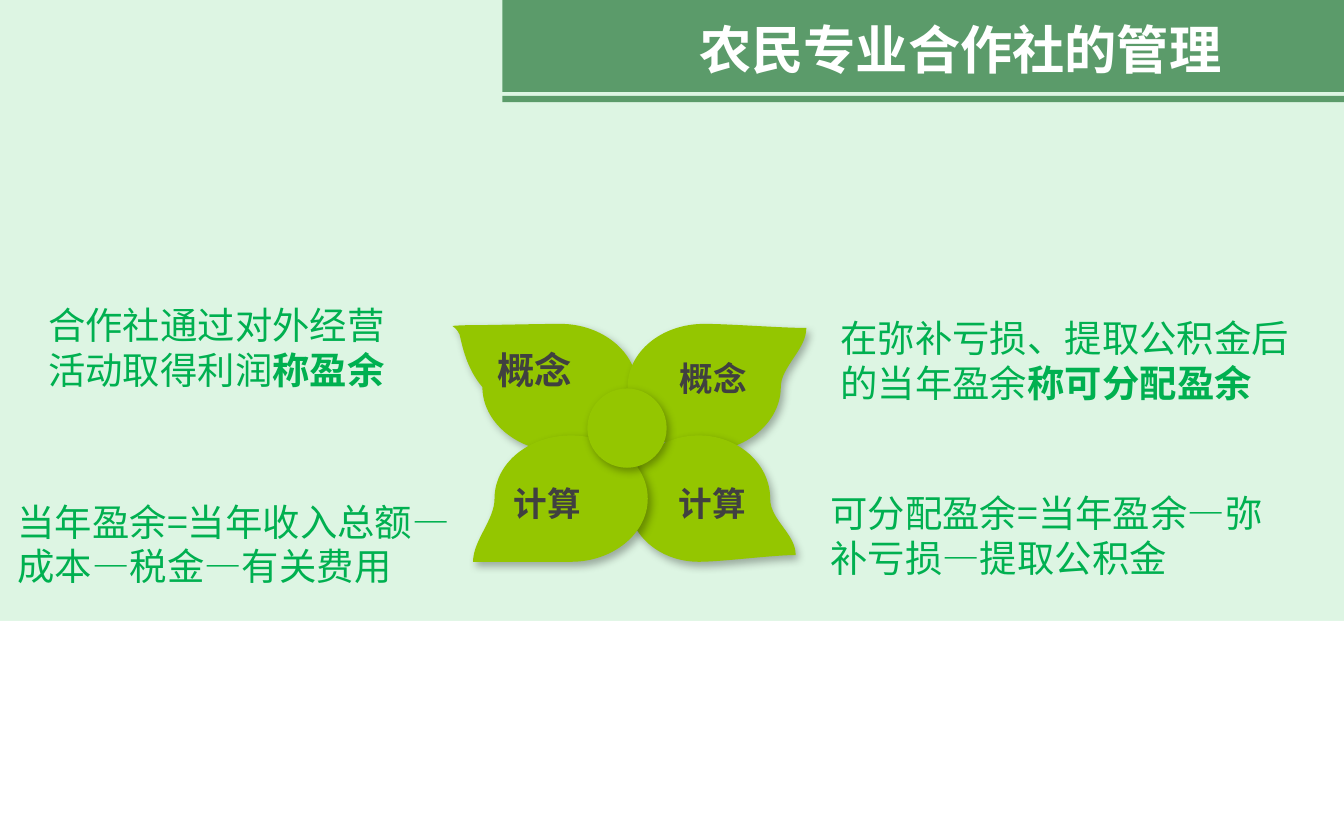
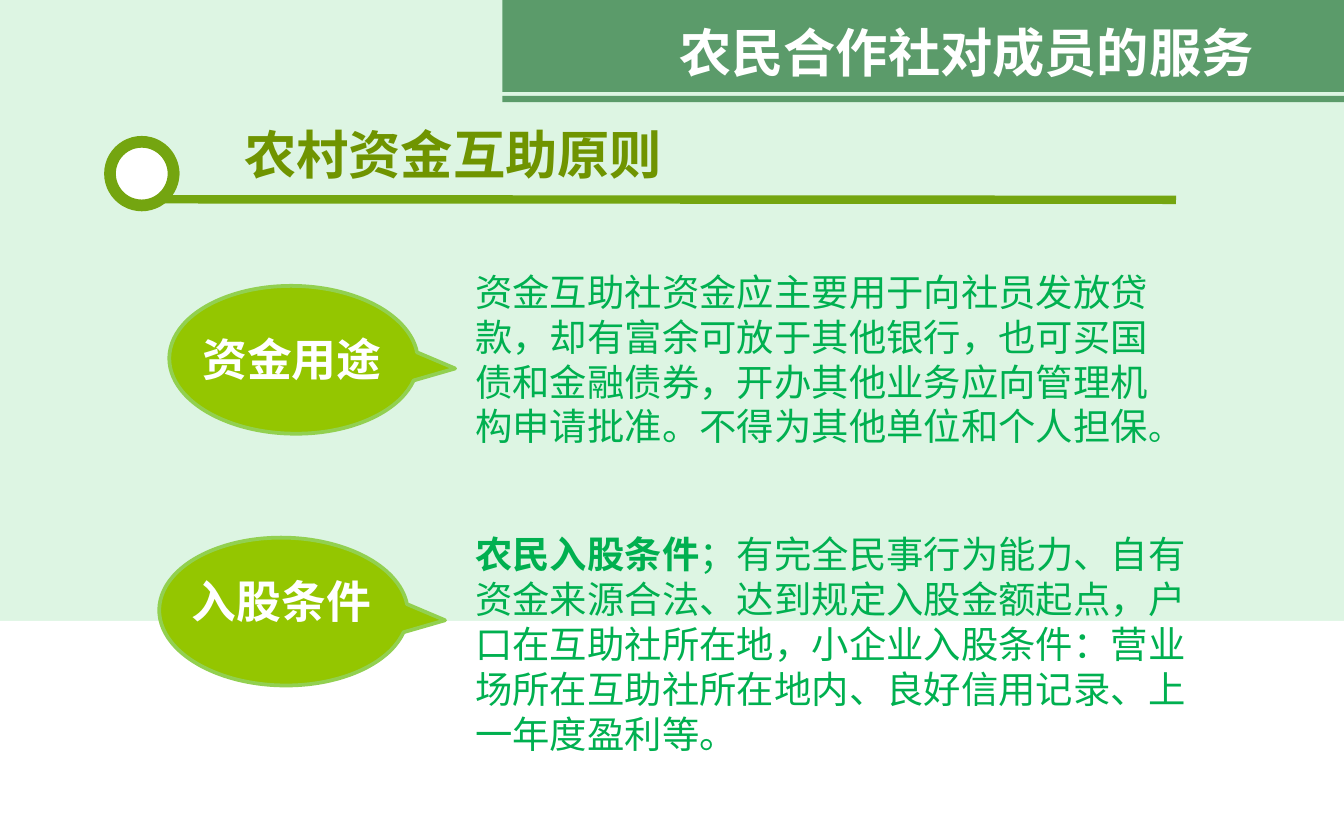
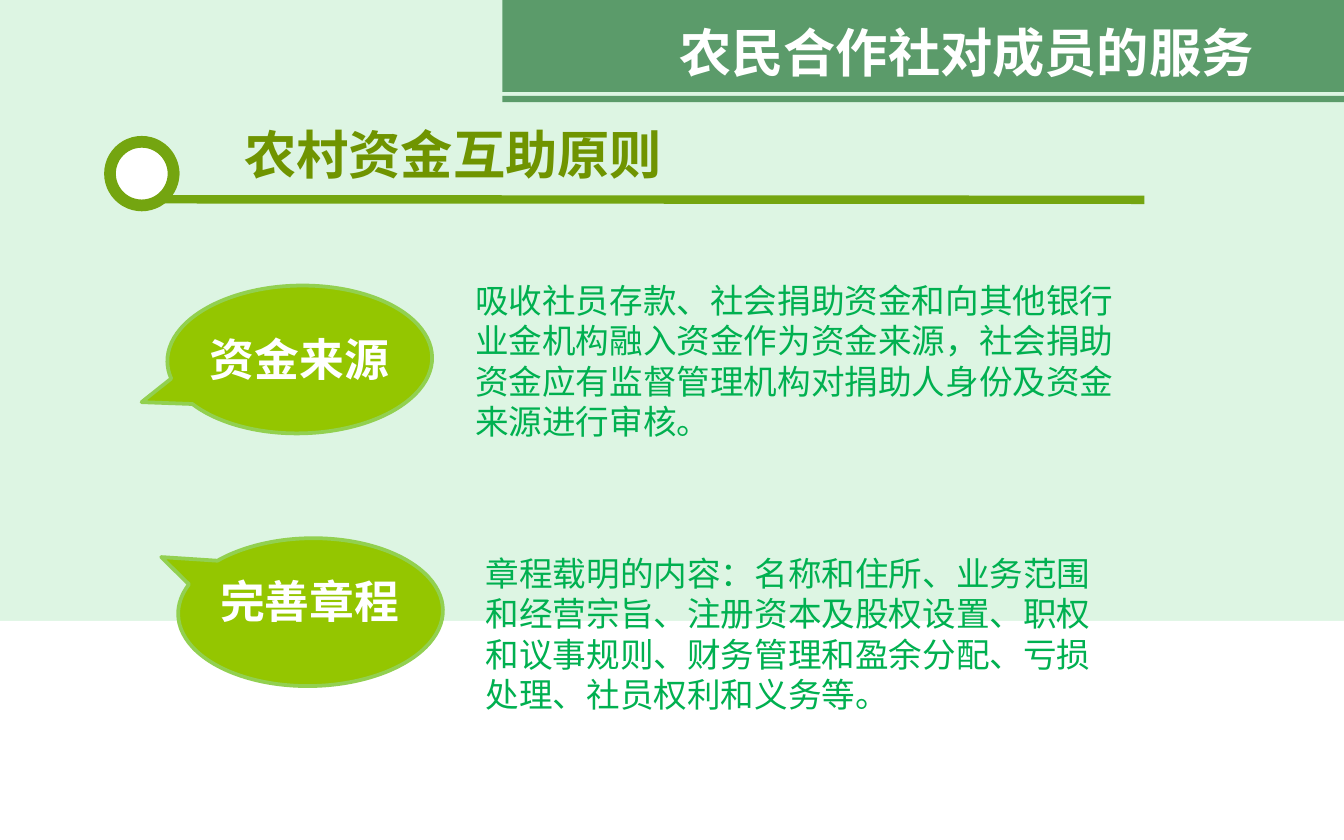
from dataclasses import dataclass

from lxml.etree import SubElement as add_xml
from pptx import Presentation
from pptx.dml.color import RGBColor as Rgb
from pptx.enum.shapes import MSO_CONNECTOR as Line, MSO_SHAPE as Kind
from pptx.enum.text import MSO_AUTO_SIZE as Fit, PP_ALIGN as Align
from pptx.oxml.ns import qn
from pptx.util import Inches, Pt


@dataclass(frozen=True)
class Theme:
    page: str = "DDF5E3"
    band: str = "217435"
    leaf: str = "94C600"
    leaf_edge: str = "92D050"
    rule: str = "74A510"
    heading: str = "6F9400"
    body: str = "00B050"
    label: str = "404040"
    white: str = "FFFFFF"
    cjk: str = "Noto Sans CJK SC"
    latin: str = "Arial"
    title_size: int = 28
    bubble_size: int = 24
    text_size: int = 20
    small_size: int = 18


theme = Theme()
deck = Presentation()
deck.slide_width, deck.slide_height = Inches(10), Inches(6.25)
CELL = deck.slide_width // 100  # square grid: 100 columns by 62.5 rows


def write_text(page, place, spans, size=theme.text_size, color=theme.body,
               font=theme.cjk, bold=False, align=Align.LEFT, wrap=True, indent=0):
    """Write a text, or (text, overrides) spans, in one paragraph."""
    box = page.shapes.add_textbox(*[round(v * CELL) for v in place])
    frame = box.text_frame
    frame.word_wrap = wrap
    frame.auto_size = Fit.SHAPE_TO_FIT_TEXT
    para = frame.paragraphs[0]
    para.alignment = align
    if indent:
        para._p.get_or_add_pPr().set("marL", str(round(indent * CELL)))
    for text, extra in [(spans, {})] if isinstance(spans, str) else spans:
        span = para.add_run()
        span.text = text
        span.font.size = Pt(extra.get("size", size))
        span.font.bold = extra.get("bold", bold)
        span.font.color.rgb = Rgb.from_string(color)
        span.font.name = font
        props = span._r.get_or_add_rPr()
        props.set("lang", "zh-CN")
        add_xml(props, qn("a:ea"), typeface=theme.cjk)


def draw_shape(page, kind, place, fill, line=None, width=0.75, rotation=0, adjust=()):
    shape = page.shapes.add_shape(kind, *[round(v * CELL) for v in place])
    shape.shadow.inherit = False
    shape.fill.solid()
    shape.fill.fore_color.rgb = Rgb.from_string(fill)
    if line:
        shape.line.color.rgb = Rgb.from_string(line)
        shape.line.width = Pt(width)
    else:
        shape.line.fill.background()
    shape.rotation = rotation
    for index, value in enumerate(adjust):
        shape.adjustments[index] = value
    return shape


# Shared background, title bands and footer
background = deck.slide_master.background.fill
background.solid()
background.fore_color.rgb = Rgb.from_string(theme.page)
pages = [deck.slides.add_slide(deck.slide_layouts[6]) for _ in range(3)]
for page in pages:
    for top, height in [(0, 6.84), (7.13, 0.47)]:
        band = draw_shape(page, Kind.RECTANGLE, (37.38, top, 62.62, height), theme.band)
        add_xml(band._element.spPr.find(".//" + qn("a:srgbClr")), qn("a:alpha"), val="69000")
    draw_shape(page, Kind.RECTANGLE, (0, 46.2, 100, 16.3), theme.white)

# Slide 1: flower; each petal is a box, a turn, and a start point with cubic curves
flower_page = pages[0]
petals = [
    ((35.8, 22, 9.5, 13.7), 270,
     [(41.7, 33.6), (38.5, 33.6), (35.9, 31.4), (35.9, 28.8),
      (34.7, 27.4), (34.4, 25.7), (34.2, 24.9), (33.9, 24.1), (33.1, 24.3), (34.4, 24.2),
      (36.3, 24.2), (39.8, 24.1), (41.7, 24.1), (44.8, 24.1), (47.4, 26.2), (47.4, 28.8),
      (47.4, 31.4), (44.8, 33.6), (41.7, 33.6)]),
    ((48.6, 22.2, 9.5, 13.3), 270,
     [(52.4, 33.6), (55.5, 33.6), (58.1, 31.4), (58.1, 28.8),
      (58.1, 27.3), (60, 26), (60, 24.4), (58.1, 24.4), (54.3, 24.1), (52.4, 24.1),
      (49.2, 24.1), (46.7, 26.2), (46.7, 28.8), (46.7, 31.4), (49.2, 33.6), (52.4, 33.6)]),
    ((48.2, 30.8, 9.4, 12.6), 90,
     [(52, 32.4), (54.9, 32.4), (57.3, 34.5), (57.3, 37.1),
      (57.3, 38.7), (59.2, 39.7), (59.2, 41.3), (57.5, 41.3), (53.7, 41.8), (52, 41.8),
      (49, 41.8), (46.7, 39.7), (46.7, 37.1), (46.7, 34.5), (49, 32.4), (52, 32.4)]),
    ((37, 30.6, 9.4, 13), 270,
     [(42.5, 32.4), (39.3, 32.4), (36.8, 34.5), (36.8, 37.1),
      (36.8, 38.7), (35.2, 40.2), (35.2, 41.8), (37.1, 41.8), (40.6, 41.8), (42.5, 41.8),
      (45.6, 41.8), (48.2, 39.7), (48.2, 37.1), (48.2, 34.5), (45.6, 32.4), (42.5, 32.4)]),
]
flower = []
for (left, top, width, height), turn, outline in petals:
    # The box spans the freeform; its outline is then made of curves
    builder = flower_page.shapes.build_freeform(left * CELL, top * CELL)
    builder.add_line_segments([((left + width) * CELL, (top + height) * CELL)], close=True)
    petal = builder.convert_to_shape()
    petal.rotation = turn
    curves = petal._element.spPr.find(".//" + qn("a:path"))
    for segment in list(curves):
        curves.remove(segment)
    side = 1 if turn == 90 else -1
    middle_x, middle_y = left + width / 2, top + height / 2
    for index, (x, y) in enumerate(outline):
        if index == 0:
            segment = add_xml(curves, qn("a:moveTo"))
        elif index % 3 == 1:
            segment = add_xml(curves, qn("a:cubicBezTo"))
        add_xml(segment, qn("a:pt"),
                x=str(round((width / 2 + side * (y - middle_y)) * CELL)),
                y=str(round((height / 2 - side * (x - middle_x)) * CELL)))
    add_xml(curves, qn("a:close"))
    petal.shadow.inherit = False
    petal.fill.solid()
    petal.fill.fore_color.rgb = Rgb.from_string(theme.leaf)
    petal.line.fill.background()
    flower.append(petal)
flower.append(draw_shape(flower_page, Kind.OVAL, (43.7, 28.9, 5.9, 5.9), theme.leaf))

# Soft shadow under the petals and the centre
for part in flower:
    effects = part._element.spPr.find(qn("a:effectLst"))
    shadow = add_xml(effects, qn("a:outerShdw"), blurRad=str(Pt(4.5)), dist=str(Pt(2.6)),
                     dir=str(53 * 60000), algn="tl", rotWithShape="0")
    shade = add_xml(shadow, qn("a:srgbClr"), val="000000")
    add_xml(shade, qn("a:alpha"), val="30000")

# Explanations and petal labels
strong = {"bold": True}
for spans, place, indent in [
    ([("合作社通过对外经营活动取得利润", {}), ("称盈余", strong)], (2.6, 22, 29.6, 7.9), 0),
    ([("在弥补亏损、提取公积金后的当年盈余", {}), ("称可分配盈余", strong)],
     (61.55, 22.95, 35.6, 7.9), 0),
    ("当年盈余=当年收入总额—成本—税金—有关费用", (-4.68, 36.62, 40.5, 11.2), 5),
    ("可分配盈余=当年盈余—弥补亏损—提取公积金", (60.8, 36, 36.4, 11.2), 0),
]:
    write_text(flower_page, place, spans, indent=indent)
for text, place, size, indent in [
    ("概念", (35.5, 25.35, 13, 4.4), theme.text_size, 0.5),
    ("概念", (49.6, 26.15, 7.9, 7.2), theme.small_size, 0),
    ("计算", (37.25, 35.45, 9.4, 4), theme.small_size, 0),
    ("计算", (49.5, 35.45, 9.9, 7.2), theme.small_size, 0),
]:
    write_text(flower_page, place, text, size=size, color=theme.label, bold=True,
               indent=indent)

# Bubbles: page, place, rotation, tail, label, label place, font, alignment
for page, place, rotation, tail, label, label_place, font, align in [
    (pages[1], (15.6, 36.25, 11, 18.5), 271, (-0.04, 0.65),
     "入股条件", (13.3, 42.2, 15.6, 5), theme.latin, Align.LEFT),
    (pages[1], (16.35, 17.52, 11, 18.5), 271, (-0.04, 0.65),
     "资金用途", (14.08, 24.2, 18, 5), theme.latin, Align.LEFT),
    (pages[2], (16.8, 16.9, 11, 19.7), 89, (0.27, 0.6),
     "资金来源", (12.53, 24.2, 19.5, 5), theme.latin, Align.CENTER),
    (pages[2], (17.6, 35.7, 11, 19.7), 89, (-0.39, 0.56),
     "完善章程", (12.5, 42.2, 21.1, 5), theme.cjk, Align.CENTER),
]:
    draw_shape(page, Kind.OVAL_CALLOUT, place, theme.leaf, line=theme.leaf_edge, width=2,
               rotation=rotation, adjust=tail)
    write_text(page, label_place, label, size=theme.bubble_size, color=theme.white,
               font=font, bold=True, align=align)

# Text beside the bubbles
for page, place, size, spans in [
    (pages[1], (34.37, 19.53, 54.7, 17.5), theme.text_size,
     [("资金互助社资金应主要用于向社员发放贷款，却有富余可放于其他银行，也可买国债和金融债券，"
       "开办其他业务应向管理机构申请批准。不得为其他单位和个人担保", {}),
      ("。", {"size": theme.small_size})]),
    (pages[1], (34.37, 39.05, 56.3, 20.9), theme.text_size,
     [("农民入股条件", strong),
      ("；有完全民事行为能力、自有资金来源合法、达到规定入股金额起点，户口在互助社所在地，"
       "小企业入股条件：营业场所在互助社所在地内、良好信用记录、上一年度盈利等。", {})]),
    (pages[2], (34.37, 20.33, 51.6, 16.2), theme.small_size,
     "吸收社员存款、社会捐助资金和向其他银行业金机构融入资金作为资金来源，"
     "社会捐助资金应有监督管理机构对捐助人身份及资金来源进行审核。"),
    (pages[2], (35.15, 40.65, 49.2, 16.2), theme.small_size,
     "章程载明的内容：名称和住所、业务范围和经营宗旨、注册资本及股权设置、"
     "职权和议事规则、财务管理和盈余分配、亏损处理、社员权利和义务等。"),
]:
    write_text(page, place, spans, size=size)

# Slides 2 and 3: ringed heading over a rule
for page, rule_end in zip(pages[1:], (87.5, 85.15)):
    draw_shape(page, Kind.OVAL, (8.3, 10.6, 5, 4.6), theme.white, line=theme.rule)
    draw_shape(page, Kind.DONUT, (7.8, 10.17, 5.5, 5.5), theme.rule, line=theme.rule,
               adjust=[0.14])
    rule = page.shapes.add_connector(
        Line.STRAIGHT, *[round(v * CELL) for v in (11.7, 14.83, rule_end, 14.87)])
    rule.line.color.rgb = Rgb.from_string(theme.rule)
    rule.line.width = Pt(4.5)
    add_xml(rule._element.spPr, qn("a:effectLst"))
    write_text(page, (17.2, 8.6, 33.4, 5.7), "农村资金互助原则", size=theme.title_size,
               color=theme.heading, bold=True, wrap=False)

# Slide titles
service_title = ("农民合作社对成员的服务", (49.25, 1, 45, 5.7), Align.RIGHT)
management_title = ("农民专业合作社的管理", (51.05, 0.8, 41.1, 5.7), Align.LEFT)
titles = [management_title, service_title, service_title]
for page, (title, place, align) in zip(pages, titles):
    write_text(page, place, title, size=theme.title_size, color=theme.white,
               font=theme.latin, bold=True, align=align, wrap=False)

deck.save("out.pptx")
